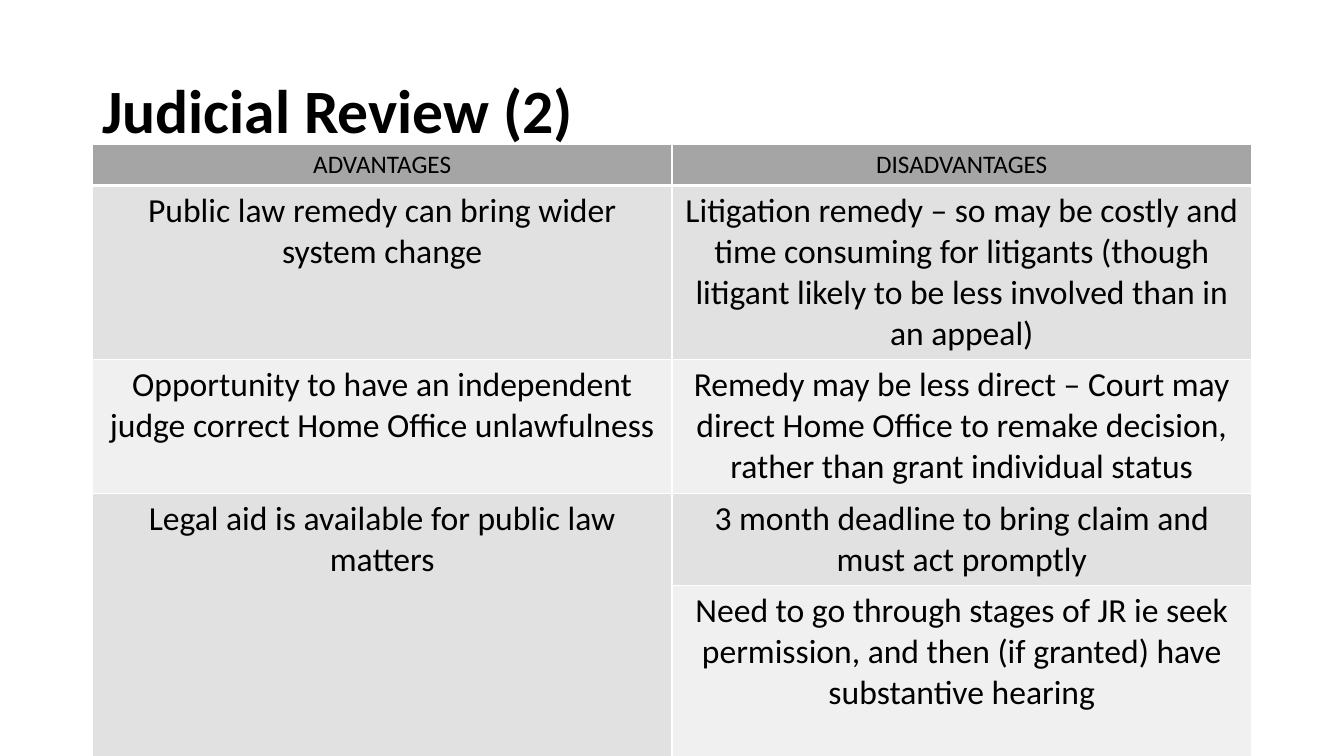
import dataclasses
import pptx
import pptx.util
import pptx.dml.color
import pptx.enum.text
import pptx.oxml
import pptx.oxml.ns

Pt = pptx.util.Pt
ALIGN = pptx.enum.text.PP_ALIGN
HUES = {"ink": "000000", "rule": "FFFFFF", "head": "A5A5A5", "dark": "E1E1E1", "pale": "F0F0F0"}
TITLE = {"size": Pt(44), "bold": True, "name": "Calibri"}
HEAD = {"size": Pt(18), "bold": False, "name": "Calibri"}
BODY = {"size": Pt(24), "bold": False, "name": "Calibri"}


@dataclasses.dataclass
class Row:
    height: float
    fill: str
    left: str
    right: str


ROWS = [
    Row(29, "head", "ADVANTAGES", "DISADVANTAGES"),
    Row(124, "dark", "Public law remedy can bring wider system change",
        "Litigation remedy – so may be costly and time consuming for litigants "
        "(though litigant likely to be less involved than in an appeal)"),
    Row(95.5, "pale", "Opportunity to have an independent judge correct Home Office unlawfulness",
        "Remedy may be less direct – Court may direct Home Office to remake decision, "
        "rather than grant individual status"),
    Row(66, "dark", "Legal aid is available for public law matters",
        "3 month deadline to bring claim and must act promptly"),
    Row(124, "pale", "",
        "Need to go through stages of JR ie seek permission, and then (if granted) "
        "have substantive hearing"),
]


def color(key: str) -> pptx.dml.color.RGBColor:
    return pptx.dml.color.RGBColor.from_string(HUES[key])


def write(frame: pptx.text.text.TextFrame, text: str, look: dict, align: ALIGN) -> None:
    frame.text = text
    para = frame.paragraphs[0]
    para.alignment = align
    for font in [para.font] + [run.font for run in para.runs]:
        for key, value in look.items():
            setattr(font, key, value)
        font.color.rgb = color("ink")


def edge(cell: pptx.table._Cell, sides: dict[str, float]) -> None:
    props = cell._tc.get_or_add_tcPr()
    for spot, (side, width) in enumerate(sides.items()):
        line = pptx.oxml.parse_xml(
            f'<a:ln{side} {pptx.oxml.ns.nsdecls("a")} w="{Pt(width)}"><a:solidFill>'
            f'<a:srgbClr val="{HUES["rule"]}"/></a:solidFill></a:ln{side}>')
        props.insert(spot, line)


def head(slide: pptx.slide.Slide) -> None:
    title = slide.shapes.title
    box = {"left": Pt(66), "top": Pt(28.75), "width": Pt(828), "height": Pt(104.4)}
    for key, value in box.items():
        setattr(title, key, value)
    frame = title.text_frame
    write(frame, "Judicial Review (2)", TITLE, ALIGN.LEFT)
    form = {"auto_size": pptx.enum.text.MSO_AUTO_SIZE.NONE, "word_wrap": True,
            "vertical_anchor": pptx.enum.text.MSO_ANCHOR.MIDDLE}
    for key, value in form.items():
        setattr(frame, key, value)
    frame.paragraphs[0].line_spacing = 0.9


def grid(slide: pptx.slide.Slide, rows: list[Row]) -> None:
    total = sum(row.height for row in rows)
    table = slide.shapes.add_table(len(rows), 2, Pt(66), Pt(103.25), Pt(828), Pt(total)).table
    table.cell(3, 0).merge(table.cell(4, 0))
    for r, row in enumerate(rows):
        table.rows[r].height = Pt(row.height)
        for c, text in enumerate((row.left, row.right)):
            cell = table.cell(r, c)
            cell.fill.solid()
            cell.fill.fore_color.rgb = color("dark" if cell.is_spanned else row.fill)
            edge(cell, {"L": 1, "R": 1, "T": 3 if r == 1 else 1, "B": 3 if r == 0 else 1})
            if text:
                write(cell.text_frame, text, BODY if r else HEAD, ALIGN.CENTER)


def main() -> None:
    deck = pptx.Presentation()
    deck.slide_width, deck.slide_height = Pt(960), Pt(540)
    slide = deck.slides.add_slide(deck.slide_layouts[5])
    head(slide)
    grid(slide, ROWS)
    deck.save("out.pptx")


if __name__ == "__main__":
    main()
